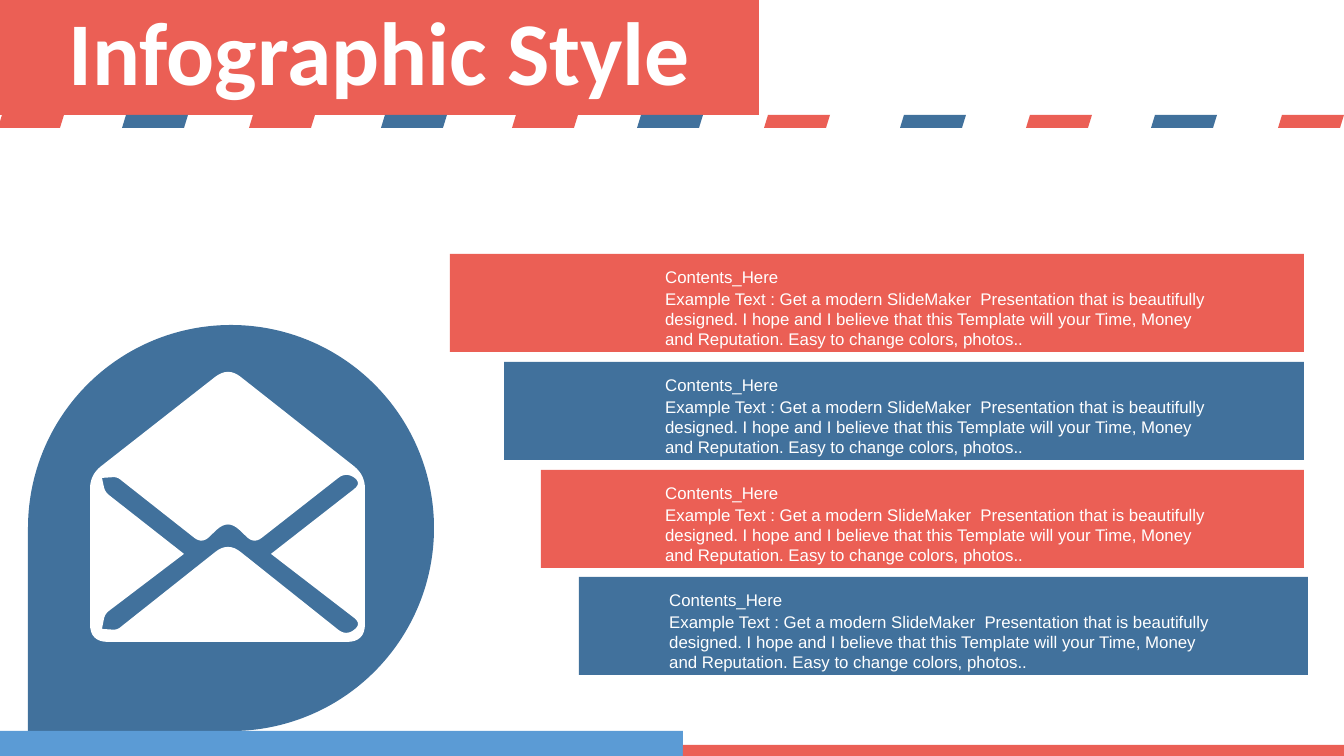
from pptx import Presentation
from pptx.dml.color import RGBColor
from pptx.enum.shapes import MSO_SHAPE
from pptx.enum.text import MSO_ANCHOR, PP_ALIGN
from pptx.util import Pt

# Content
TITLE = "Infographic Style"
HEADING = "Contents_Here"
BODY = ("Example Text : Get a modern SlideMaker  Presentation that is beautifully "
        "designed. I hope and I believe that this Template will your Time, Money "
        "and Reputation. Easy to change colors, photos..")
RED, BLUE, SKY, WHITE = "EB5F55", "41719C", "5B9BD5", "FFFFFF"

# Bars: left, top, right, text left
BARS = [
    (450, 254, 1304, 652),
    (504, 362, 1304, 652),
    (541, 470, 1304, 652),
    (579, 577, 1308, 656),
]
BAR_HEIGHT = 98
STRIPE_LEFTS = [-2, 122, 249, 381, 512, 637, 764, 900, 1026, 1151, 1278]
STRIPE_WIDTH, STRIPE_HEIGHT, STRIPE_SLANT = 66, 13, 4

# Envelope: corner x, corner y, rounding
ENVELOPE = [(90, 642, 18), (90, 475, 14), (228, 367, 16), (365, 475, 14), (365, 642, 18)]
FOLDS = [
    (184, 554, 0), (105, 614, 5), (102, 629, 0), (117, 630, 4), (228, 542, 16),
    (346, 636, 10), (362, 624, 10), (271, 554, 0), (362, 483, 10), (346, 472, 10),
    (254, 544, 10), (228, 519, 16), (202, 544, 10), (117, 477, 4), (102, 478, 0),
    (105, 492, 5),
]

WIDTH, HEIGHT = 1344, 756
SCALE = 9144000 / WIDTH


def px(value):
    return round(value * SCALE)


def color(value):
    return RGBColor.from_string(value)


def paint(shape, fill):
    shape.shadow.inherit = False
    shape.fill.solid()
    shape.fill.fore_color.rgb = color(fill)
    shape.line.fill.background()
    return shape


def add_shape(kind, left, top, width, height, fill):
    return paint(page.shapes.add_shape(kind, px(left), px(top), px(width), px(height)), fill)


def write(shape, text, size=9, font="Arial", bold=False, align=PP_ALIGN.LEFT,
          anchor=MSO_ANCHOR.TOP, spacing=1.0):
    frame = shape.text_frame
    frame.word_wrap = True
    frame.vertical_anchor = anchor
    para = frame.paragraphs[0]
    para.alignment = align
    para.line_spacing = spacing
    span = para.add_run()
    span.text = text
    span.font.size = Pt(size)
    span.font.name = font
    span.font.bold = bold
    span.font.color.rgb = color(WHITE)


def add_text(left, top, width, height, text):
    write(page.shapes.add_textbox(px(left), px(top), px(width), px(height)), text)


def toward(start, end, distance):
    dx, dy = end[0] - start[0], end[1] - start[1]
    ratio = distance / (dx * dx + dy * dy) ** 0.5
    return start[0] + dx * ratio, start[1] + dy * ratio


def round_corners(corners, steps=8):
    """Replace each corner by a quadratic curve that starts and ends at its rounding."""
    points = []
    for i, corner in enumerate(corners):
        x, y, radius = corner
        if not radius:
            points.append((px(x), px(y)))
            continue
        # The cut runs along the edge, measured so that gentle slopes stay smooth
        a = toward(corner, corners[i - 1], radius)
        b = toward(corner, corners[(i + 1) % len(corners)], radius)
        for step in range(steps + 1):
            t = step / steps
            points.append(tuple(
                px((1 - t) ** 2 * a[k] + 2 * t * (1 - t) * corner[k] + t * t * b[k])
                for k in (0, 1)))
    return points


deck = Presentation()
deck.slide_width, deck.slide_height = px(WIDTH), px(HEIGHT)
page = deck.slides.add_slide(deck.slide_layouts[6])

# Title band
band = add_shape(MSO_SHAPE.RECTANGLE, 0, -2, 759, 117, RED)
write(band, TITLE, size=48, font="Calibri", bold=True, align=PP_ALIGN.CENTER,
      anchor=MSO_ANCHOR.MIDDLE, spacing=0.9)

# Content bars
for i, (left, top, right, text_left) in enumerate(BARS):
    add_shape(MSO_SHAPE.RECTANGLE, left, top, right - left, BAR_HEIGHT, (RED, BLUE)[i % 2])
    add_text(text_left, top + 28, 578, 75, BODY)
    add_text(text_left, top + 6, 246, 34, HEADING)

# Teardrop with open envelope
drop = add_shape(MSO_SHAPE.TEAR, 28, 325, 406, 406, BLUE)
drop.rotation = 180
outline, folds = round_corners(ENVELOPE), round_corners(FOLDS)
builder = page.shapes.build_freeform(*outline[0])
builder.add_line_segments(outline[1:], close=True)
builder.move_to(*folds[0])
builder.add_line_segments(folds[1:], close=True)
paint(builder.convert_to_shape(), WHITE)

# Footer strips
add_shape(MSO_SHAPE.RECTANGLE, 0, 731, 683, 25, SKY)
add_shape(MSO_SHAPE.RECTANGLE, 683, 745, 661, 11, RED)

# Airmail stripes
for i, left in enumerate(STRIPE_LEFTS):
    stripe = add_shape(MSO_SHAPE.PARALLELOGRAM, left, 115, STRIPE_WIDTH, STRIPE_HEIGHT,
                       (RED, BLUE)[i % 2])
    stripe.adjustments[0] = STRIPE_SLANT / STRIPE_HEIGHT

deck.save("out.pptx")
